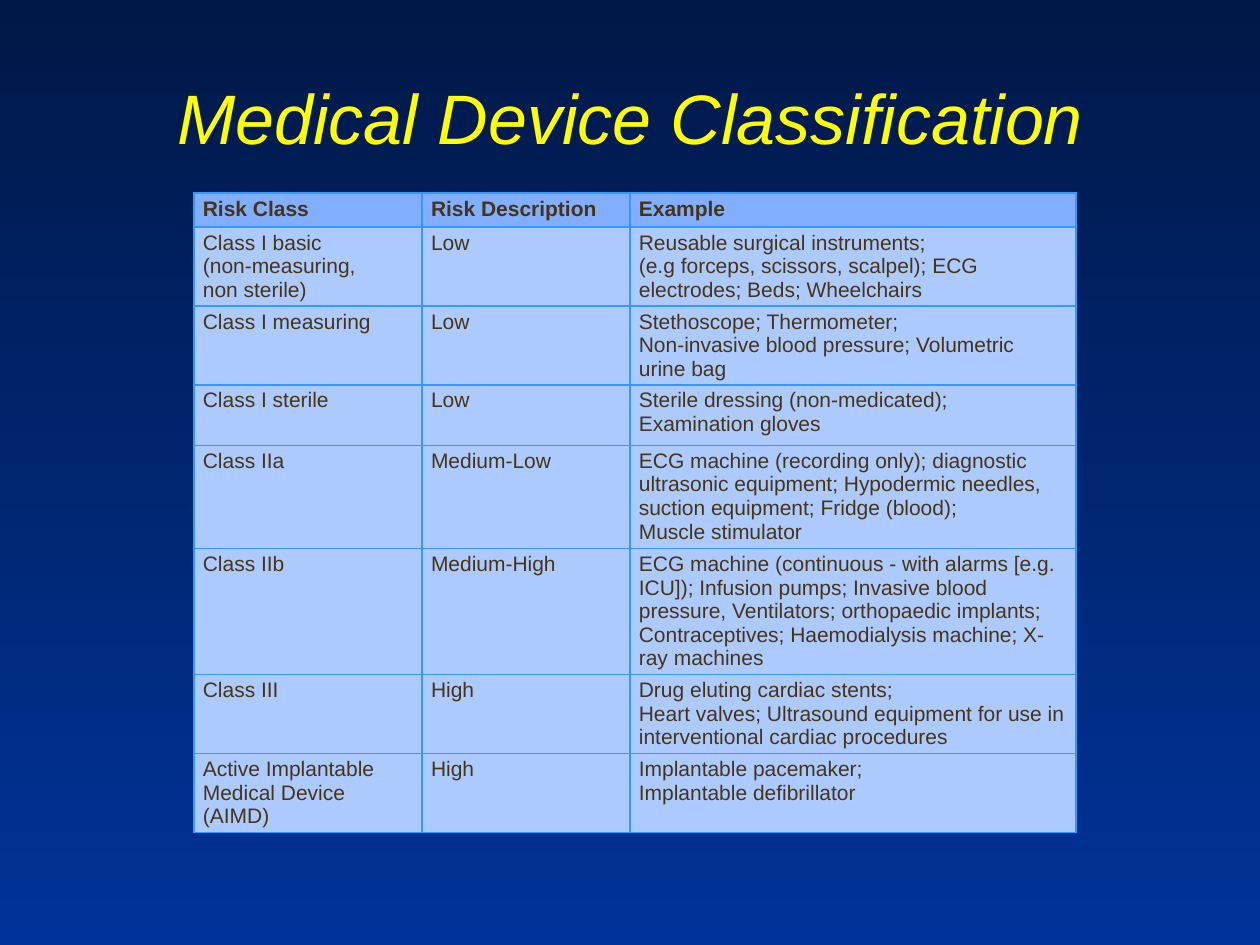
from lxml.etree import SubElement
from pptx import Presentation
from pptx.dml.color import RGBColor as Rgb
from pptx.enum.text import MSO_AUTO_SIZE as AutoSize, MSO_ANCHOR as Anchor, PP_ALIGN as Align
from pptx.oxml.ns import qn
from pptx.util import Cm, Pt

COLORS = {
    "sky_top": "001847",
    "sky_bottom": "003399",
    "title": "FFFF00",
    "header": "82AEFF",
    "body": "ADCAFF",
    "text": "463416",
    "border": "3399FF",
}

# Table content: \n starts a paragraph, \v breaks a line
ROWS = [
    ("Risk Class", "Risk Description", "Example"),
    ("Class I basic\v(non-measuring, \vnon sterile)", "Low",
     "Reusable surgical instruments;\n"
     "(e.g forceps, scissors, scalpel); ECG electrodes; Beds; Wheelchairs"),
    ("Class I measuring", "Low",
     "Stethoscope; Thermometer;\vNon-invasive blood pressure; Volumetric urine bag"),
    ("Class I sterile", "Low", "Sterile dressing (non-medicated); Examination gloves"),
    ("Class IIa", "Medium-Low",
     "ECG machine (recording only); diagnostic ultrasonic equipment; "
     "Hypodermic needles, suction equipment; Fridge (blood); \vMuscle stimulator"),
    ("Class IIb", "Medium-High",
     "ECG machine (continuous - with alarms [e.g. ICU]); Infusion pumps; "
     "Invasive blood pressure, Ventilators; orthopaedic implants; "
     "Contraceptives; Haemodialysis machine; X-ray machines"),
    ("Class III", "High",
     "Drug eluting cardiac stents;\n"
     "Heart valves; Ultrasound equipment for use in interventional cardiac procedures"),
    ("Active Implantable Medical Device (AIMD)", "High",
     "Implantable pacemaker;\nImplantable defibrillator"),
]
COLUMN_WIDTHS = [4.6, 4.19, 8.99]
ROW_HEIGHTS = [0.69, 1.59, 1.59, 1.22, 2.08, 2.54, 1.59, 1.59]


class SlideBuilder:
    font = "Arial"

    def __init__(self, slide):
        self.slide = slide

    def background(self, top, bottom):
        fill = self.slide.background.fill
        fill.gradient()
        fill.gradient_angle = 270
        for stop, color in zip(fill.gradient_stops, (top, bottom)):
            stop.color.rgb = Rgb.from_string(COLORS[color])

    def format_text(self, text_frame, size, color, bold=False, italic=False):
        for paragraph in text_frame.paragraphs:
            for run in paragraph.runs:
                font = run.font
                font.name, font.size = self.font, Pt(size)
                font.bold, font.italic = bold, italic
                font.color.rgb = Rgb.from_string(COLORS[color])

    def title(self, text, left, top, width, height):
        shape = self.slide.shapes.title
        shape.left, shape.top = Cm(left), Cm(top)
        shape.width, shape.height = Cm(width), Cm(height)
        text_frame = shape.text_frame
        text_frame.text = text
        text_frame.auto_size = AutoSize.NONE
        text_frame.vertical_anchor = Anchor.MIDDLE
        text_frame.paragraphs[0].alignment = Align.CENTER
        self.format_text(text_frame, 40, "title", italic=True)

    def border(self, cell):
        properties = cell._tc.get_or_add_tcPr()
        for position, side in enumerate(("a:lnL", "a:lnR", "a:lnT", "a:lnB")):
            line = SubElement(properties, qn(side), w=str(Pt(1)))
            properties.insert(position, line)
            fill = SubElement(line, qn("a:solidFill"))
            SubElement(fill, qn("a:srgbClr"), val=COLORS["border"])

    def cell(self, cell, text, is_header):
        cell.margin_left = cell.margin_right = Cm(0.18)
        cell.margin_top = cell.margin_bottom = Cm(0.08)
        cell.fill.solid()
        cell.fill.fore_color.rgb = Rgb.from_string(COLORS["header" if is_header else "body"])
        cell.text_frame.text = text
        self.format_text(cell.text_frame, 12, "text", bold=is_header)
        self.border(cell)

    def table(self, rows, left, top, widths, heights):
        frame = self.slide.shapes.add_table(
            len(rows), len(widths), Cm(left), Cm(top), Cm(sum(widths)), Cm(sum(heights)))
        table = frame.table
        for column, width in zip(table.columns, widths):
            column.width = Cm(width)
        for index, (row, height, texts) in enumerate(zip(table.rows, heights, rows)):
            row.height = Cm(height)
            for cell, text in zip(row.cells, texts):
                self.cell(cell, text, is_header=index == 0)


def main():
    presentation = Presentation()
    presentation.slide_width, presentation.slide_height = Cm(25.4), Cm(19.05)
    title_only = presentation.slide_layouts[5]
    builder = SlideBuilder(presentation.slides.add_slide(title_only))

    # Background and title
    builder.background("sky_top", "sky_bottom")
    builder.title("Medical Device Classification", 1.27, 0.76, 22.86, 3.18)

    # Risk class table
    builder.table(ROWS, 3.91, 3.89, COLUMN_WIDTHS, ROW_HEIGHTS)

    presentation.save("out.pptx")


if __name__ == "__main__":
    main()
